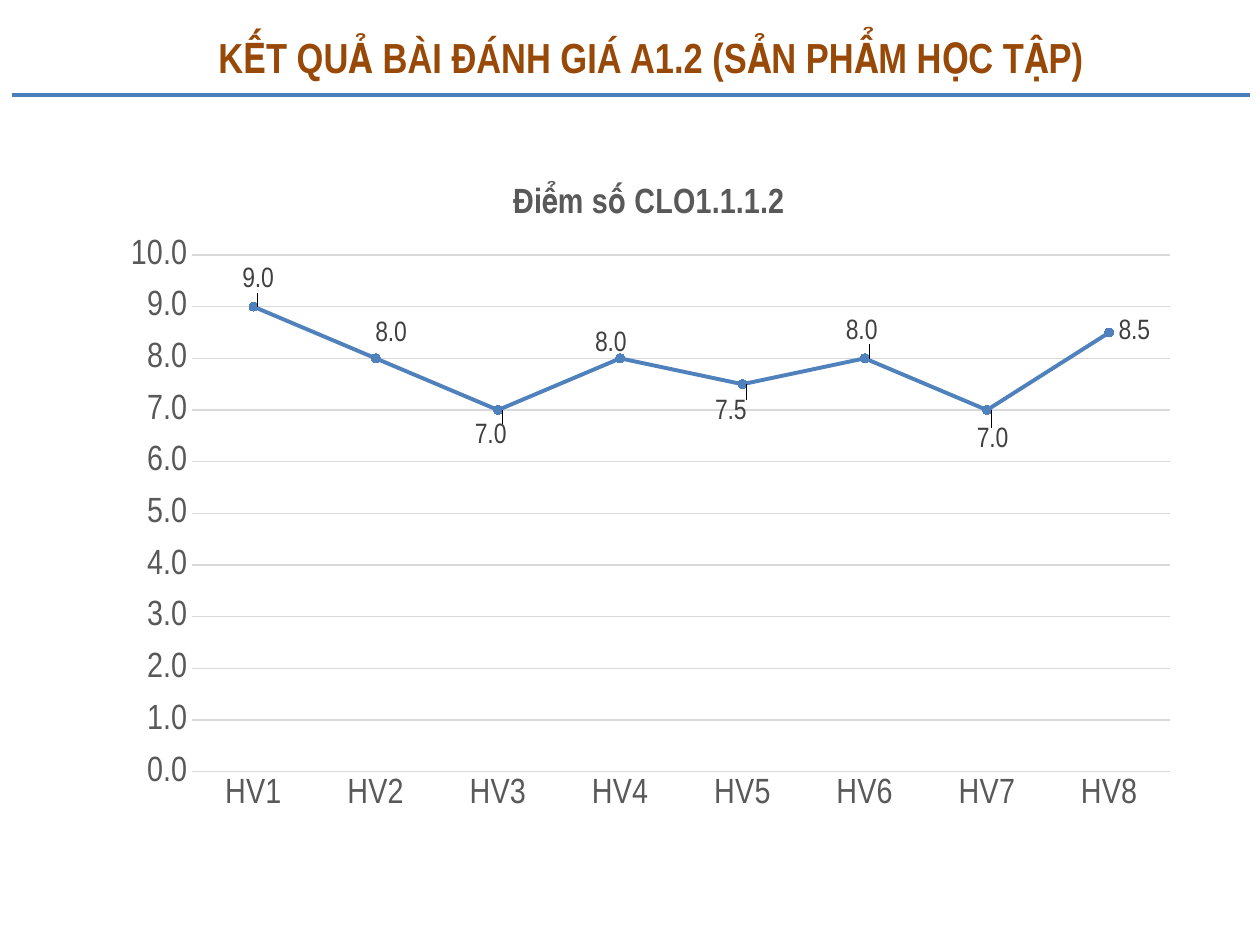
from lxml import etree
from pptx import Presentation
from pptx import util as u
from pptx.chart.data import CategoryChartData
from pptx.dml.color import RGBColor
from pptx.enum import chart as charts, shapes, text
from pptx.oxml import ns

TITLE = "KẾT QUẢ BÀI ĐÁNH GIÁ A1.2 (SẢN PHẨM HỌC TẬP)"
CHART_TITLE = "Điểm số CLO1.1.1.2"
# learner, score, shift of the label in px from its place right of the point
SCORES = [
    ("HV1", 9, (-21, -26)),
    ("HV2", 8, (-10, -24)),
    ("HV3", 7, (-33, 26)),
    ("HV4", 8, (-35, -14)),
    ("HV5", 7.5, (-37, 28)),
    ("HV6", 8, (-28, -26)),
    ("HV7", 7, (-20, 30)),
    ("HV8", 8.5, None),
]
COLORS = {"title": "984807", "rule": "4B7EBC", "series": "4F81BD",
          "axis": "595959", "grid": "D9D9D9", "label": "404040"}
FONT = "Arial Narrow"
NUMBERS = "0.0"

PX = u.Inches(1) // 126
CHART_BOX = (108, 157, 1082, 667)
PLOT_BOX = (192, 255, 978, 517)


def px(*lengths):
    return [length * PX for length in lengths]


def color(name):
    return RGBColor.from_string(COLORS[name])


def style(font, size, name, bold=False):
    font.name, font.size, font.bold = FONT, u.Pt(size), bold
    font.color.rgb = color(name)


def stroke(line, name, width):
    line.color.rgb = color(name)
    line.width = u.Pt(width)


def manual_layout(**values):
    """Return a c:layout element that holds the given settings in order."""
    layout = etree.Element(ns.qn("c:layout"))
    manual = etree.SubElement(layout, ns.qn("c:manualLayout"))
    for tag, value in values.items():
        etree.SubElement(manual, ns.qn("c:" + tag)).set("val", str(value))
    return layout


def add_title(page):
    title = page.shapes.title
    title.left, title.top, title.width, title.height = px(42, 15, 1218, 84)
    frame = title.text_frame
    frame.text = TITLE
    frame.word_wrap = True
    frame.vertical_anchor = text.MSO_ANCHOR.MIDDLE
    para = frame.paragraphs[0]
    para.alignment = text.PP_ALIGN.CENTER
    style(para.runs[0].font, 24, "title", bold=True)


def add_rule(page):
    rule = page.shapes.add_connector(shapes.MSO_CONNECTOR.STRAIGHT, *px(12, 95, 1250, 95))
    stroke(rule.line, "rule", 2)
    etree.SubElement(rule.element.spPr, ns.qn("a:effectLst"))


def format_axes(chart):
    values, categories = chart.value_axis, chart.category_axis
    for axis in (values, categories):
        axis.major_tick_mark = axis.minor_tick_mark = charts.XL_TICK_MARK.NONE
        style(axis.tick_labels.font, 20, "axis")
    stroke(categories.format.line, "grid", 0.75)
    values.format.line.fill.background()
    values.minimum_scale, values.maximum_scale, values.major_unit = 0, 10, 1
    values.tick_labels.number_format = NUMBERS
    values.tick_labels.number_format_is_linked = False
    stroke(values.major_gridlines.format.line, "grid", 0.75)


def format_series(series):
    series.smooth = False
    stroke(series.format.line, "series", 2.25)
    marker = series.marker
    marker.style, marker.size = charts.XL_MARKER_STYLE.CIRCLE, 5
    marker.format.fill.solid()
    marker.format.fill.fore_color.rgb = color("series")
    stroke(marker.format.line, "series", 0.75)

    labels = series.data_labels
    labels.show_value = True
    labels.number_format, labels.number_format_is_linked = NUMBERS, False
    labels.position = charts.XL_LABEL_POSITION.RIGHT
    style(labels.font, 16, "label")
    for index, (_, _, shift) in enumerate(SCORES):
        if shift:
            label = series.points[index].data_label
            label.position = charts.XL_LABEL_POSITION.RIGHT
            style(label.font, 16, "label")
    shifts = [shift for _, _, shift in SCORES if shift]
    for element, (right, down) in zip(labels._element.findall(ns.qn("c:dLbl")), shifts):
        layout = manual_layout(x=round(right / CHART_BOX[2], 3), y=round(down / CHART_BOX[3], 3))
        element.find(ns.qn("c:idx")).addnext(layout)


def add_score_chart(page):
    data = CategoryChartData(number_format=NUMBERS)
    data.categories = [name for name, _, _ in SCORES]
    data.add_series("Series 1", [score for _, score, _ in SCORES])
    chart = page.shapes.add_chart(charts.XL_CHART_TYPE.LINE_MARKERS, *px(*CHART_BOX), data).chart
    chart.has_legend = False
    chart.font.name, chart.font.size = FONT, u.Pt(10)
    chart.has_title = True
    chart.chart_title.include_in_layout = False
    frame = chart.chart_title.text_frame
    frame.text = CHART_TITLE
    style(frame.paragraphs[0].runs[0].font, 20, "axis", bold=True)

    format_axes(chart)
    chart.plots[0].vary_by_categories = False
    format_series(chart.plots[0].series[0])

    left, top, width, height = CHART_BOX
    plot_left, plot_top, plot_width, plot_height = PLOT_BOX
    plot_area = chart.element.find(".//" + ns.qn("c:plotArea"))
    for old in plot_area.findall(ns.qn("c:layout")):
        plot_area.remove(old)
    plot_area.insert(0, manual_layout(
        layoutTarget="inner", xMode="edge", yMode="edge",
        x=round((plot_left - left) / width, 3), y=round((plot_top - top) / height, 3),
        w=round(plot_width / width, 3), h=round(plot_height / height, 3)))


def main():
    deck = Presentation()
    deck.slide_width, deck.slide_height = u.Inches(10), u.Inches(7.5)
    page = deck.slides.add_slide(deck.slide_layouts[5])
    add_rule(page)
    add_title(page)
    add_score_chart(page)
    deck.save("out.pptx")


if __name__ == "__main__":
    main()
